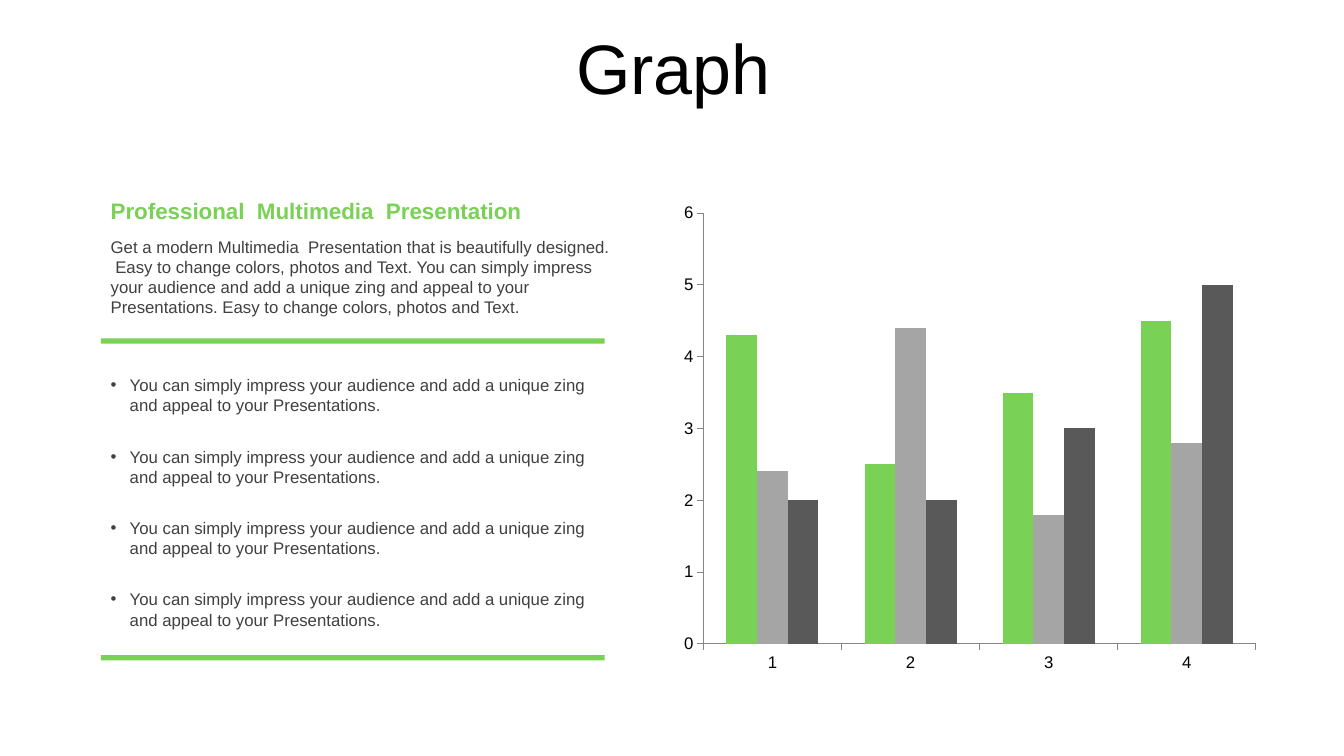
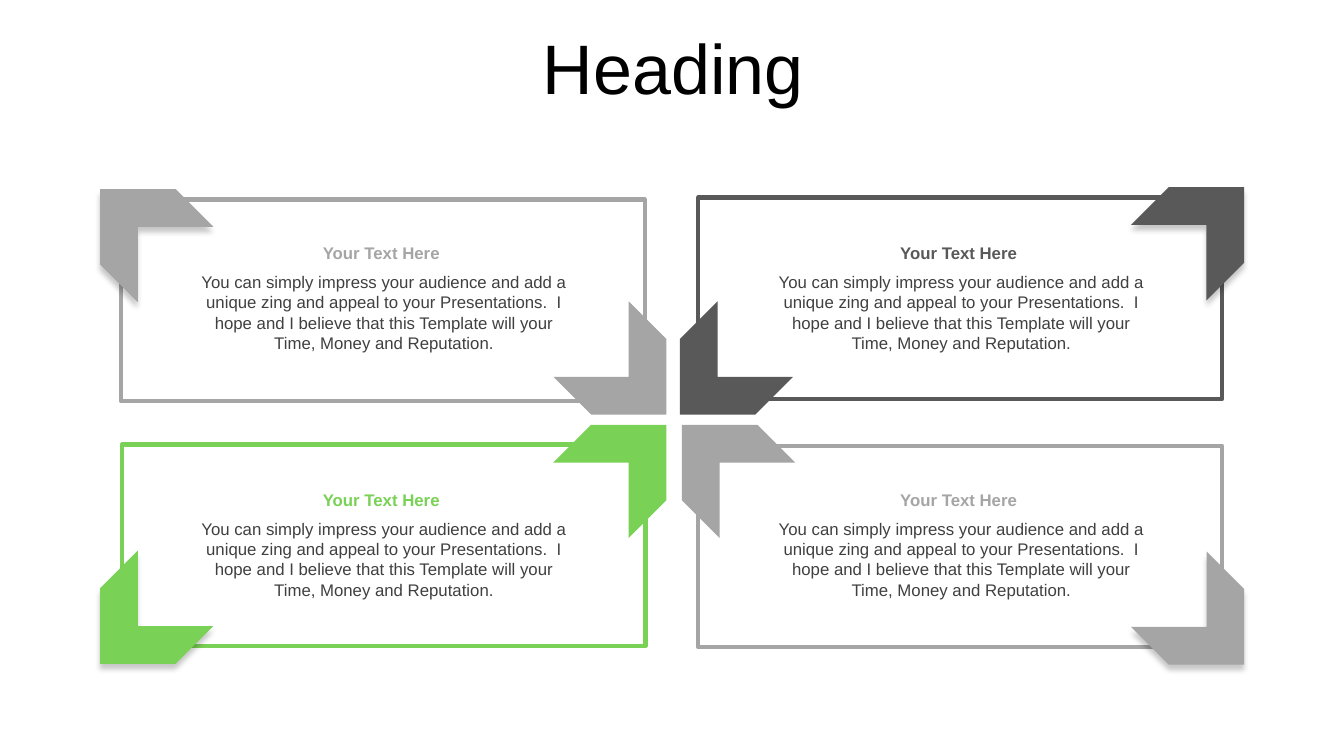
"""Build a two-slide deck: a column chart with notes and four framed panels."""
from dataclasses import dataclass
from typing import Optional

from lxml import etree
from pptx import Presentation
from pptx.chart.data import CategoryChartData
from pptx.dml.color import RGBColor
from pptx.enum.chart import XL_CHART_TYPE, XL_TICK_MARK
from pptx.enum.shapes import MSO_SHAPE
from pptx.enum.text import MSO_ANCHOR, MSO_AUTO_SIZE, PP_ALIGN
from pptx.oxml.ns import qn
from pptx.shapes.autoshape import Shape
from pptx.slide import Slide
from pptx.util import Cm, Pt

COLUMNS = XL_CHART_TYPE.COLUMN_CLUSTERED
TICK_OUT = XL_TICK_MARK.OUTSIDE
RECTANGLE = MSO_SHAPE.RECTANGLE
CHEVRON = MSO_SHAPE.CHEVRON
MIDDLE = MSO_ANCHOR.MIDDLE
GROW = MSO_AUTO_SIZE.SHAPE_TO_FIT_TEXT
LEFT = PP_ALIGN.LEFT
CENTER = PP_ALIGN.CENTER


@dataclass(frozen=True)
class Theme:
    font: str = "Arial"
    green: RGBColor = RGBColor(0x79, 0xD1, 0x55)
    grey: RGBColor = RGBColor(0xA5, 0xA5, 0xA5)
    dark: RGBColor = RGBColor(0x59, 0x59, 0x59)
    text: RGBColor = RGBColor(0x40, 0x40, 0x40)
    axis: RGBColor = RGBColor(0x86, 0x86, 0x86)
    black: RGBColor = RGBColor(0, 0, 0)
    white: RGBColor = RGBColor(0xFF, 0xFF, 0xFF)
    title_size: int = 50
    lead_size: int = 16
    body_size: int = 12
    frame_width: int = 3


THEME = Theme()


@dataclass(frozen=True)
class Box:
    left: float
    top: float
    width: float
    height: float

    def lengths(self) -> tuple[Cm, Cm, Cm, Cm]:
        return Cm(self.left), Cm(self.top), Cm(self.width), Cm(self.height)


@dataclass(frozen=True)
class TextStyle:
    size: int = THEME.body_size
    color: RGBColor = THEME.text
    bold: bool = False
    align: PP_ALIGN = LEFT


@dataclass(frozen=True)
class Panel:
    color: RGBColor
    frame: tuple[float, float]
    inner: tuple[float, float]
    outer: tuple[float, float]
    outer_angle: int
    text: tuple[float, float]


@dataclass(frozen=True)
class Series:
    name: str
    values: tuple[float, ...]
    color: RGBColor


TITLE_BOX = Box(0.89, 0.94, 32.16, 2.01)
CHART_BOX = Box(16.94, 4.9, 15.01, 12.27)
NOTES_LEFT, NOTES_WIDTH = 2.54, 13.18
RULE_TOPS = (8.53, 16.51)
BULLET_TOP, BULLET_STEP, BULLET_COUNT = 9.32, 1.8, 4
BULLET_INDENT = Cm(0.48)
FRAME_SIZE = (13.2, 5.08)
CHEVRON_SIDE = 2.69

LEAD = "Professional  Multimedia  Presentation"
INTRO = (
    "Get a modern Multimedia  Presentation that is beautifully designed.  "
    "Easy to change colors, photos and Text. You can simply impress your "
    "audience and add a unique zing and appeal to your Presentations. "
    "Easy to change colors, photos and Text."
)
BULLET = (
    "You can simply impress your audience and add a unique zing "
    "and appeal to your Presentations."
)
PANEL_HEADING = "Your Text Here"
PANEL_BODY = (
    f"{BULLET}  I hope and I believe that this Template will your "
    "Time, Money and Reputation."
)

CATEGORIES = ("1", "2", "3", "4")
SERIES = (
    Series("Series 1", (4.3, 2.5, 3.5, 4.5), THEME.green),
    Series("Series 2", (2.4, 4.4, 1.8, 2.8), THEME.grey),
    Series("Series 3", (2, 2, 3, 5), THEME.dark),
)
PANELS = (
    Panel(THEME.green, (3.07, 11.2), (14.5, 10.31), (2.13, 14.43), 135, (4.75, 12.95)),
    Panel(THEME.grey, (3.05, 5.03), (14.5, 8.15), (2.13, 4.37), 225, (4.75, 6.73)),
    Panel(THEME.dark, (17.6, 4.98), (16.74, 8.15), (29.06, 4.32), 315, (19.3, 6.73)),
    Panel(THEME.grey, (17.6, 11.23), (16.79, 10.31), (29.06, 14.45), 45, (19.3, 12.95)),
)


def add_text(slide: Slide, box: Box, text: str, style: TextStyle) -> Shape:
    """Add a wrapped text box holding one styled paragraph."""
    holder = slide.shapes.add_textbox(*box.lengths())
    frame = holder.text_frame
    frame.word_wrap = True
    frame.auto_size = GROW
    paragraph = frame.paragraphs[0]
    paragraph.alignment = style.align
    run = paragraph.add_run()
    run.text = text
    run.font.name = THEME.font
    run.font.size = Pt(style.size)
    run.font.bold = style.bold
    run.font.color.rgb = style.color
    return holder


def add_title(slide: Slide, text: str) -> None:
    """Add the centred slide title."""
    style = TextStyle(THEME.title_size, THEME.black, align=CENTER)
    frame = add_text(slide, TITLE_BOX, text, style).text_frame
    frame.auto_size = MSO_AUTO_SIZE.NONE
    frame.vertical_anchor = MIDDLE
    frame.paragraphs[0].line_spacing = 0.7
    frame.paragraphs[0].space_before = Pt(10)


def add_bullet(slide: Slide, box: Box, text: str) -> None:
    """Add a text box whose paragraph hangs from a bullet."""
    paragraph = add_text(slide, box, text, TextStyle()).text_frame.paragraphs[0]
    properties = paragraph._p.get_or_add_pPr()
    properties.set("marL", str(int(BULLET_INDENT)))
    properties.set("indent", str(-int(BULLET_INDENT)))
    etree.SubElement(properties, qn("a:buFont"), typeface=THEME.font)
    etree.SubElement(properties, qn("a:buChar"), char="•")


def add_block(slide: Slide, kind: MSO_SHAPE, box: Box, fill: RGBColor,
              line: Optional[RGBColor] = None) -> Shape:
    """Add a flat preset shape with an optional outline."""
    block = slide.shapes.add_shape(kind, *box.lengths())
    block.shadow.inherit = False
    block.fill.solid()
    block.fill.fore_color.rgb = fill
    if line is None:
        block.line.fill.background()
    else:
        block.line.color.rgb = line
        block.line.width = Pt(THEME.frame_width)
    return block


def add_chevron(slide: Slide, place: tuple[float, float], angle: int,
                color: RGBColor) -> Shape:
    """Add a corner chevron turned by the given angle."""
    box = Box(*place, CHEVRON_SIDE, CHEVRON_SIDE)
    corner = add_block(slide, CHEVRON, box, color)
    corner.rotation = angle
    return corner


def cast_shadow(block: Shape) -> None:
    """Give a shape a soft shadow that falls straight down."""
    effects = block._element.spPr.find(qn("a:effectLst"))
    shadow = etree.SubElement(
        effects, qn("a:outerShdw"), blurRad=str(int(Pt(4))),
        dist=str(int(Pt(4))), dir="5400000", algn="t", rotWithShape="0")
    color = etree.SubElement(shadow, qn("a:srgbClr"), val=str(THEME.black))
    etree.SubElement(color, qn("a:alpha"), val="22000")


def add_columns(slide: Slide) -> None:
    """Add the clustered column chart."""
    data = CategoryChartData()
    data.categories = CATEGORIES
    for entry in SERIES:
        data.add_series(entry.name, entry.values)
    chart = slide.shapes.add_chart(COLUMNS, *CHART_BOX.lengths(), data).chart
    chart.has_legend = False
    chart.has_title = False
    chart.font.name = THEME.font
    chart.font.size = Pt(THEME.body_size)
    chart.font.color.rgb = THEME.black
    plot = chart.plots[0]
    plot.gap_width = 150
    plot.overlap = 0
    plot.vary_by_categories = False
    for columns, entry in zip(plot.series, SERIES):
        columns.format.fill.solid()
        columns.format.fill.fore_color.rgb = entry.color
    for axis in (chart.category_axis, chart.value_axis):
        axis.has_major_gridlines = False
        axis.major_tick_mark = TICK_OUT
        axis.format.line.color.rgb = THEME.axis
        axis.format.line.width = Pt(0.75)
    chart.value_axis.minimum_scale = 0
    chart.value_axis.maximum_scale = 6
    chart.value_axis.major_unit = 1


def add_panel(slide: Slide, panel: Panel) -> None:
    """Add a framed panel with two corner chevrons and its text."""
    add_block(slide, RECTANGLE, Box(*panel.frame, *FRAME_SIZE), THEME.white, panel.color)
    add_chevron(slide, panel.inner, (panel.outer_angle + 180) % 360, panel.color)
    cast_shadow(add_chevron(slide, panel.outer, panel.outer_angle, panel.color))
    left, top = panel.text
    add_text(slide, Box(left, top, 9.86, 2.31), PANEL_BODY, TextStyle(align=CENTER))
    add_text(slide, Box(left - 0.03, top - 0.74, 9.78, 0.76), PANEL_HEADING,
             TextStyle(color=panel.color, bold=True, align=CENTER))


def build_graph(slide: Slide) -> None:
    """Fill the slide with the chart and its notes."""
    add_title(slide, "Graph")
    add_columns(slide)
    for top in RULE_TOPS:
        add_block(slide, RECTANGLE, Box(NOTES_LEFT, top, 12.7, 0.13), THEME.green)
    for index in range(BULLET_COUNT):
        top = BULLET_TOP + index * BULLET_STEP
        add_bullet(slide, Box(NOTES_LEFT, top, NOTES_WIDTH, 1.27), BULLET)
    add_text(slide, Box(NOTES_LEFT, 4.85, NOTES_WIDTH, 0.94), LEAD,
             TextStyle(THEME.lead_size, THEME.green, bold=True))
    add_text(slide, Box(NOTES_LEFT, 5.84, NOTES_WIDTH, 2.31), INTRO, TextStyle())


def build_heading(slide: Slide) -> None:
    """Fill the slide with the four panels."""
    add_title(slide, "Heading")
    for panel in PANELS:
        add_panel(slide, panel)


def main() -> None:
    """Build and save the deck."""
    deck = Presentation()
    deck.slide_width = Cm(33.87)
    deck.slide_height = Cm(19.05)
    blank = deck.slide_layouts[6]
    for build in (build_graph, build_heading):
        build(deck.slides.add_slide(blank))
    deck.save("out.pptx")


if __name__ == "__main__":
    main()
